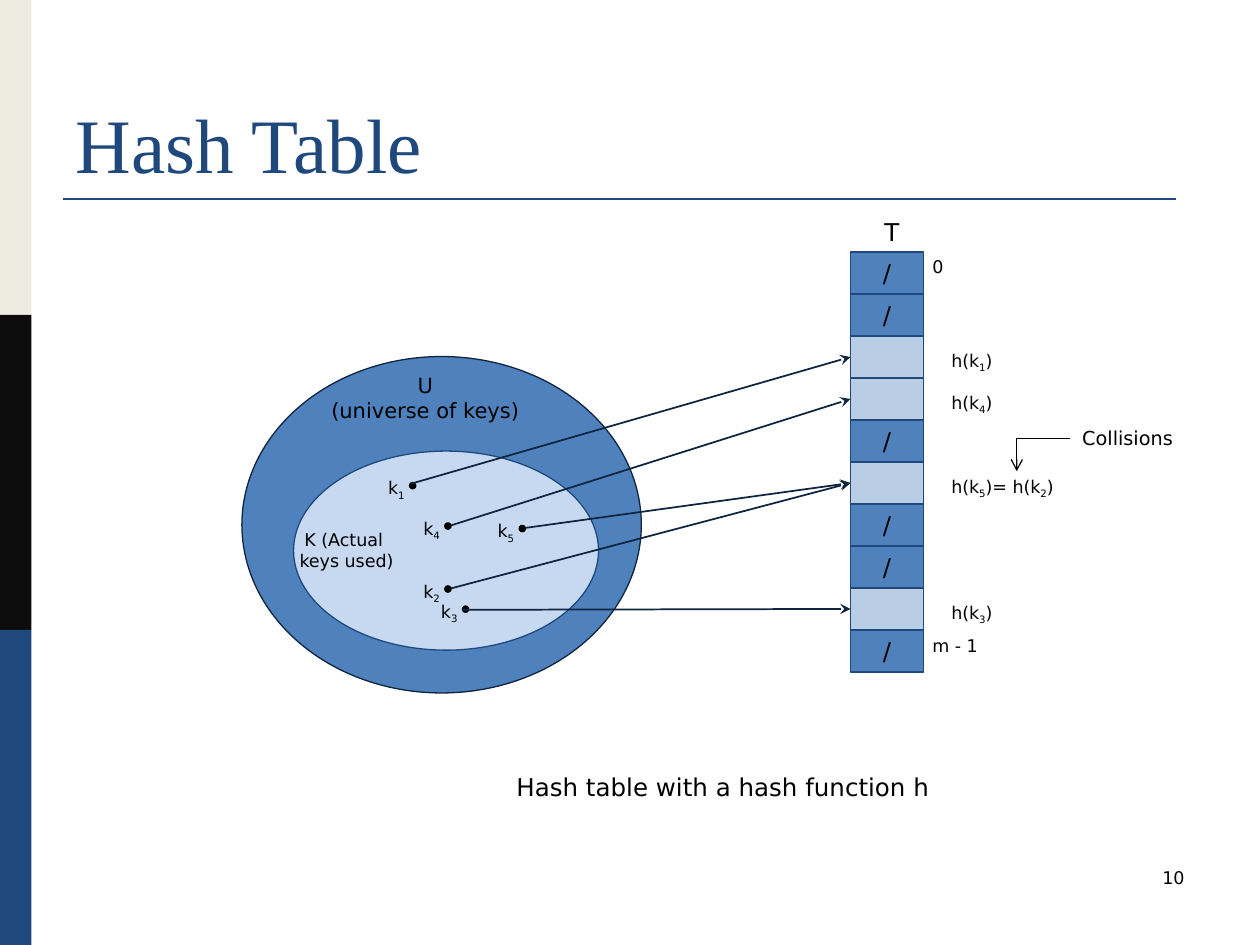
from pptx import Presentation
from pptx.dml.color import RGBColor
from pptx.enum.shapes import MSO_CONNECTOR as Connector, MSO_SHAPE as Shape
from pptx.enum.text import MSO_ANCHOR as Anchor, PP_ALIGN as Align
from pptx.oxml.ns import qn
from pptx.oxml.xmlchemy import OxmlElement
from pptx.util import Inches, Pt

NAVY, DARK, BLUE, BLACK = "1F497D", "0F243E", "4F81BD", "000000"
PALE, USED = "C6D9F1", "B9CDE5"
ROWS = 10
KEYS = [
    ("1", (3.25, 3.83), (3.26, 3.84), 2),
    ("4", (3.53, 4.15), (3.58, 4.17), 3),
    ("5", (4.12, 4.17), (4.17, 4.19), 5),
    ("2", (3.53, 4.65), (3.58, 4.67), 5),
    ("3", (3.67, 4.81), (3.67, 4.84), 8),
]
SLOT_LABELS = {2: "h(k_1)", 3: "h(k_4)", 5: "h(k_5)= h(k_2)", 8: "h(k_3)"}


def color(value):
    """Turn a hex string into a colour."""
    return RGBColor.from_string(value)


def write(shape, text, size=10, font="DejaVu Sans", fill=BLACK, align=Align.LEFT,
          anchor=Anchor.TOP, inset=0.1, wrap=True):
    """Write lines of text; the character after an underscore is a subscript."""
    frame = shape.text_frame
    frame.word_wrap = wrap
    frame.vertical_anchor = anchor
    frame.margin_left = frame.margin_right = Inches(inset)
    for index, line in enumerate(text.split("\n")):
        paragraph = frame.add_paragraph() if index else frame.paragraphs[0]
        paragraph.alignment = align
        first, *rest = line.split("_")
        pieces = [(first, False)]
        for part in rest:
            pieces += [(part[:1], True), (part[1:], False)]
        for piece, lowered in pieces:
            if not piece:
                continue
            run = paragraph.add_run()
            run.text = piece
            run.font.size, run.font.name = Pt(size), font
            run.font.color.rgb = color(fill)
            if lowered:
                run.font._element.set("baseline", "-25000")


def add_text(slide, box, text, **style):
    """Add a text box."""
    write(slide.shapes.add_textbox(*map(Inches, box)), text, **style)


def add_block(slide, kind, box, fill, line=None):
    """Add a flat preset shape."""
    shape = slide.shapes.add_shape(kind, *map(Inches, box))
    shape.shadow.inherit = False
    shape.fill.solid()
    shape.fill.fore_color.rgb = color(fill)
    if line:
        shape.line.color.rgb = color(line)
        shape.line.width = Pt(0.75)
    else:
        shape.line.fill.background()
    return shape


def add_line(slide, start, end, line, width, head=None, kind=Connector.STRAIGHT):
    """Add a connector, with an optional arrowhead at its end."""
    connector = slide.shapes.add_connector(kind, *map(Inches, (*start, *end)))
    connector.line.color.rgb = color(line)
    connector.line.width = Pt(width)
    if head:
        tail = OxmlElement("a:tailEnd")
        tail.set("type", head)
        connector.line._get_or_add_ln().append(tail)
    properties = connector._element.spPr
    properties.append(OxmlElement("a:effectLst"))
    if kind == Connector.ELBOW:
        properties.find(qn("a:prstGeom")).set("prst", "bentConnector2")


def build_frame(slide, box):
    """Place the side bands, the title with its rule, and the page number."""
    left, top, width, height = box
    band = height / 3
    for index, fill in enumerate(("EEECE1", "0C0C0C", NAVY)):
        add_block(slide, Shape.RECTANGLE, (left, top + index * band, 0.25, band), fill)
    add_line(slide, (left + 0.5, top + 1.58), (left + 9.33, top + 1.58), NAVY, 1.5)
    title = slide.shapes.title
    title.left, title.top = Inches(left + 0.5), Inches(top + 0.3)
    title.width, title.height = Inches(width - 1), Inches(1.25)
    write(title, "Hash Table", size=44, font="Times New Roman", fill=NAVY,
          anchor=Anchor.BOTTOM)
    add_text(slide, (left + 7.17, top + 6.83, 2.33, 0.5), "10", align=Align.RIGHT)


def build_universe(slide, box):
    """Place the universe of keys and the set of keys in use."""
    left, top, width, height = box
    add_block(slide, Shape.OVAL, box, BLUE, DARK)
    add_block(slide, Shape.OVAL, (left + 0.41, top + 0.75, 2.42, 1.58), PALE, NAVY)
    add_text(slide, (left + 0.58, top + 0.08, 1.75, 0.5), "U\n(universe of keys)",
             size=12, align=Align.CENTER)
    add_text(slide, (left + 0.33, top + 1.32, 1, 0.44), "K (Actual \nkeys used)",
             align=Align.CENTER, inset=0)


def build_table(slide, box):
    """Place the slots of the table with their labels."""
    left, top, width, height = box
    step = height / ROWS
    add_text(slide, (left + 0.17, top - 0.33, 0.33, 0.34), "T", size=14)
    for row in range(ROWS):
        slot_top = top + row * step
        label = SLOT_LABELS.get(row)
        slot = add_block(slide, Shape.RECTANGLE, (left, slot_top, width, step),
                         USED if label else BLUE, NAVY)
        if label:
            add_text(slide, (left + 0.8, slot_top + 0.06, 1.03, 0.27), label, inset=0)
        else:
            write(slot, "/", size=14, align=Align.CENTER, anchor=Anchor.MIDDLE)
    for label, label_top in (("0", top - 0.02), ("m - 1", top + height - 0.34)):
        add_text(slide, (left + 0.65, label_top, 0.42, 0.27), label, inset=0)


def build_keys(slide, table_box):
    """Place each key and its arrow to a slot of the table."""
    left, top, width, height = table_box
    for number, (dot_left, dot_top), start, row in KEYS:
        add_text(slide, (dot_left - 0.17, dot_top - 0.09, 0.2, 0.27), f"k_{number}", inset=0)
        add_block(slide, Shape.OVAL, (dot_left, dot_top, 0.05, 0.05), BLACK, BLACK)
        add_line(slide, start, (left, top + (row + 0.5) * height / ROWS), DARK, 1, "stealth")


def build_collision(slide, box):
    """Place the collision note and its bent arrow."""
    left, top, width, height = box
    add_text(slide, box, "Collisions", size=11, wrap=False)
    add_line(slide, (left, top + 0.15), (left - 0.42, top + 0.41), BLACK, 0.75,
             "arrow", Connector.ELBOW)


def main():
    """Build and save the slide."""
    presentation = Presentation()
    presentation.slide_width, presentation.slide_height = Inches(10), Inches(7.5)
    slide = presentation.slides.add_slide(presentation.slide_layouts[5])
    table_box = (6.75, 2, 0.58, 10 / 3)
    build_frame(slide, (0, 0, 10, 7.5))
    build_universe(slide, (1.92, 2.83, 3.17, 2.67))
    build_table(slide, table_box)
    build_keys(slide, table_box)
    build_collision(slide, (8.49, 3.33, 0.92, 0.29))
    add_text(slide, (4, 6.08, 4.92, 0.34), "Hash table with a hash function h", size=14)
    presentation.save("out.pptx")


if __name__ == "__main__":
    main()
